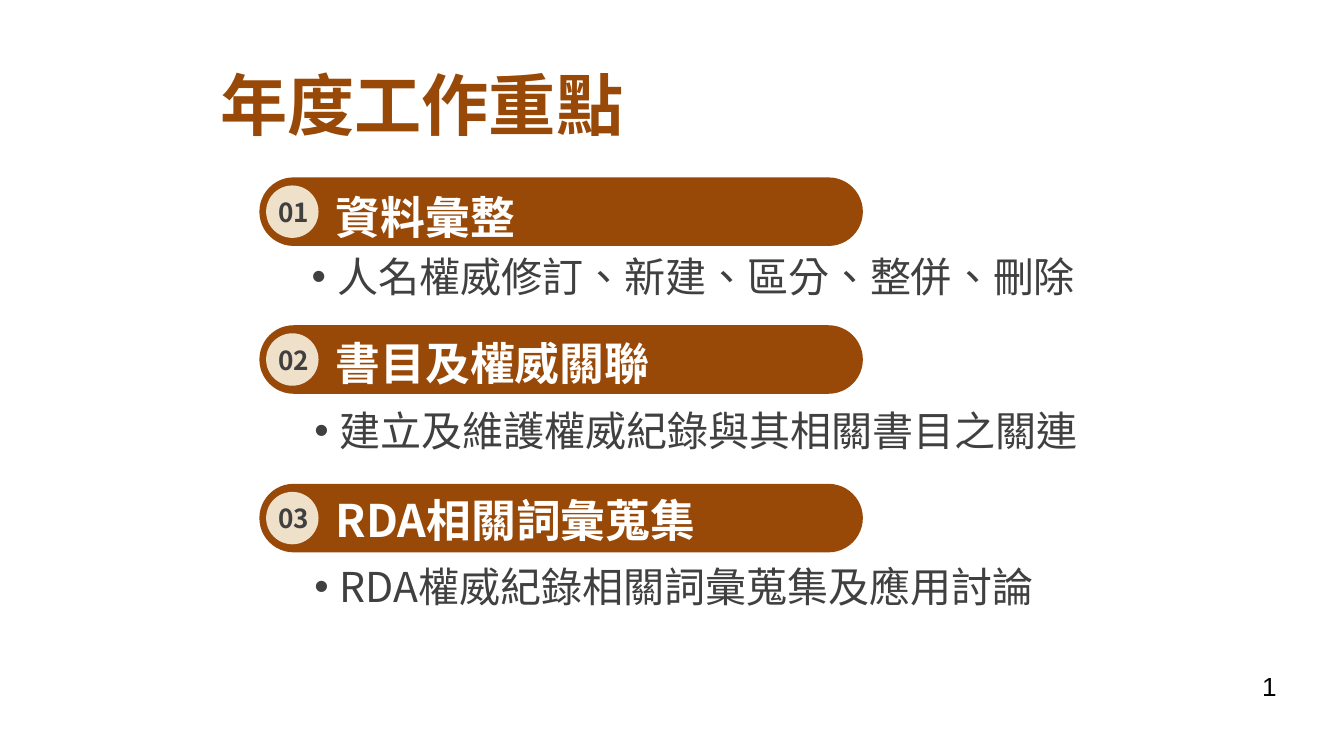
"""Build the slide of yearly work priorities."""
import pptx
import pptx.dml.color
import pptx.enum.shapes
import pptx.enum.text
import pptx.oxml.ns
import pptx.util
from lxml import etree

Inches = pptx.util.Inches
RGBColor = pptx.dml.color.RGBColor
MSO_SHAPE = pptx.enum.shapes.MSO_SHAPE
PP_ALIGN = pptx.enum.text.PP_ALIGN
MSO_ANCHOR = pptx.enum.text.MSO_ANCHOR
MSO_AUTO_SIZE = pptx.enum.text.MSO_AUTO_SIZE
qn = pptx.oxml.ns.qn

BROWN = RGBColor(0x98, 0x48, 0x07)
CREAM = RGBColor(0xEF, 0xE0, 0xCA)
GREY = RGBColor(0x40, 0x40, 0x40)
WHITE = RGBColor(0xFF, 0xFF, 0xFF)
BLACK = RGBColor(0x00, 0x00, 0x00)
CJK = "Noto Sans CJK SC"

TITLE = {"name": CJK, "size": pptx.util.Pt(36), "bold": True}
HEADING = {"name": CJK, "size": pptx.util.Pt(24), "bold": True}
NUMBER = {"name": CJK, "size": pptx.util.Pt(14), "bold": True}
BODY = {"name": CJK, "size": pptx.util.Pt(22), "bold": False}
PAGE = {"name": "Arial", "size": pptx.util.Pt(14), "bold": False}

prs = pptx.Presentation()
prs.slide_width = Inches(10)
prs.slide_height = Inches(10 * 9 / 16)
s = prs.slides.add_slide(prs.slide_layouts[6])


def add_shape(kind, box, color):
    sp = s.shapes.add_shape(kind, *map(Inches, box))
    sp.shadow.inherit = False
    sp.fill.solid()
    sp.fill.fore_color.rgb = color
    sp.line.fill.background()
    return sp


def add_text(text, box, font, color, align=PP_ALIGN.LEFT, bullet=False):
    tf = s.shapes.add_textbox(*map(Inches, box)).text_frame
    tf.word_wrap = True
    tf.auto_size = MSO_AUTO_SIZE.SHAPE_TO_FIT_TEXT
    p = tf.paragraphs[0]
    p.alignment = align
    if bullet:
        pPr = p._p.get_or_add_pPr()
        pPr.set("marL", str(Inches(0.19)))
        pPr.set("indent", str(Inches(-0.19)))
        etree.SubElement(pPr, qn("a:buFont"), typeface="Arial")
        etree.SubElement(pPr, qn("a:buChar"), char="•")
    r = p.add_run()
    r.text = text
    for key, value in font.items():
        setattr(r.font, key, value)
    r.font.color.rgb = color
    rPr = r._r.get_or_add_rPr()
    rPr.set("lang", "zh-TW")
    etree.SubElement(rPr, qn("a:ea"), typeface=font["name"])
    return tf


tf = add_text("年度工作重點", (1.54, 0.46, 7.83, 0.63), TITLE, BROWN)
tf.auto_size = MSO_AUTO_SIZE.NONE
tf.vertical_anchor = MSO_ANCHOR.MIDDLE

sections = [
    (1.32, 1.36, 3.56, "資料彙整", (2.22, 1.82, 6.17, 0.47), "人名權威修訂、新建、區分、整併、刪除"),
    (2.42, 2.45, 3.31, "書目及權威關聯", (2.24, 2.97, 5.91, 0.47), "建立及維護權威紀錄與其相關書目之關連"),
    (3.6, 3.62, 5.31, "RDA相關詞彙蒐集", (2.24, 4.13, 6.14, 0.47), "RDA權威紀錄相關詞彙蒐集及應用討論"),
]
for i, (top, heading_top, width, heading, body_box, body) in enumerate(sections, 1):
    bar = add_shape(MSO_SHAPE.ROUNDED_RECTANGLE, (1.93, top, 4.49, 0.51), BROWN)
    bar.adjustments[0] = 0.5
    add_shape(MSO_SHAPE.OVAL, (1.98, top + 0.06, 0.39, 0.39), CREAM)
    add_text(heading, (2.4, heading_top, width, 0.5), HEADING, WHITE)
    add_text(f"{i:02}", (1.96, top + 0.09, 0.45, 0.34), NUMBER, GREY, PP_ALIGN.CENTER)
    add_text(body, body_box, BODY, GREY, bullet=True)

add_text("1", (9.25, 4.94, 0.39, 0.34), PAGE, BLACK, PP_ALIGN.CENTER)

prs.save("out.pptx")
